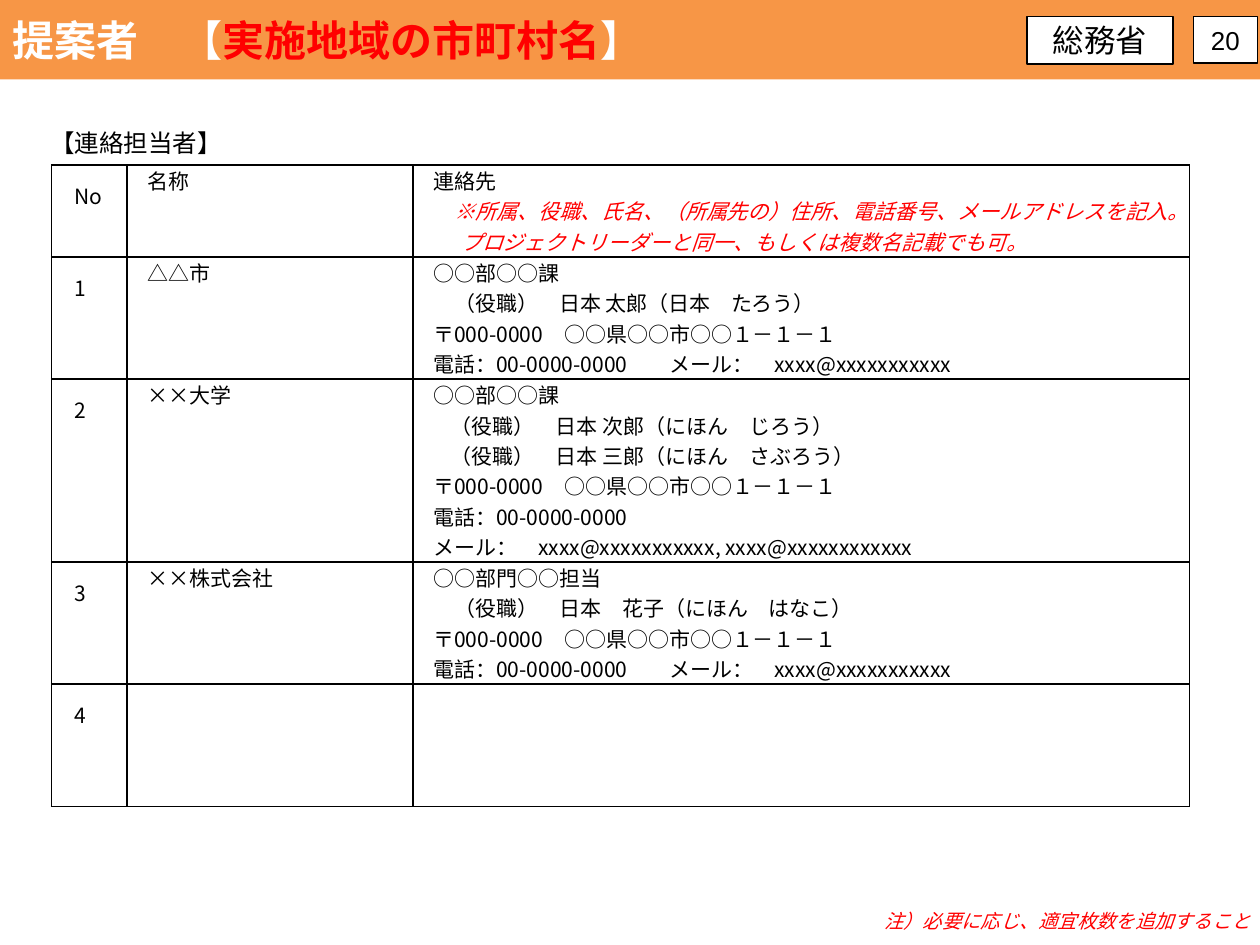
from pptx import Presentation
from pptx.dml.color import RGBColor
from pptx.enum.shapes import MSO_SHAPE
from pptx.enum.text import MSO_ANCHOR, MSO_AUTO_SIZE, PP_ALIGN
from pptx.oxml import parse_xml
from pptx.oxml.ns import nsdecls
from pptx.util import Inches, Pt

JP = "Noto Sans CJK JP"


def rgb(value):
    return RGBColor.from_string(value)


def format_run(r, size, color="000000", name=JP, bold=False, italic=False):
    """Set the run's font for both Latin and East Asian text."""
    f = r.font
    f.size, f.name, f.bold, f.italic = Pt(size), name, bold, italic
    f.color.rgb = rgb(color)
    f._element.find("{*}latin").addnext(
        parse_xml(f'<a:ea {nsdecls("a")} typeface="{name}"/>'))


prs = Presentation()
prs.slide_width, prs.slide_height = Inches(10), Inches(7.5)
s = prs.slides.add_slide(prs.slide_layouts[5])

# Title bar
title = s.shapes.title
title.left, title.top = Inches(0), Inches(0)
title.width, title.height = Inches(10), Inches(0.63)
title.fill.solid()
title.fill.fore_color.rgb = rgb("F79646")
tf = title.text_frame
tf.auto_size = MSO_AUTO_SIZE.NONE
tf.vertical_anchor = MSO_ANCHOR.MIDDLE
p = tf.paragraphs[0]
p.alignment = PP_ALIGN.LEFT
for text, color in [("提案者　【", "FFFFFF"), ("実施地域の市町村名", "FF0000"),
                    ("】", "FFFFFF")]:
    r = p.add_run()
    r.text = text
    format_run(r, 24, color, bold=True)

# Ministry and page number boxes
for text, x, w, h, size, line in [("総務省", 8.15, 1.16, 0.38, 18, 1),
                                  ("20", 9.47, 0.51, 0.37, 14.8, 0.75)]:
    sp = s.shapes.add_shape(MSO_SHAPE.RECTANGLE, Inches(x), Inches(0.13),
                            Inches(w), Inches(h))
    sp.shadow.inherit = False
    sp.fill.solid()
    sp.fill.fore_color.rgb = rgb("FFFFFF")
    sp.line.color.rgb = rgb("000000")
    sp.line.width = Pt(line)
    tf = sp.text_frame
    tf.text = text
    tf.word_wrap = False
    tf.vertical_anchor = MSO_ANCHOR.MIDDLE
    tf.paragraphs[0].alignment = PP_ALIGN.CENTER
    format_run(tf.paragraphs[0].runs[0], size, name="Arial")

# Contact table: number, name, contact lines
postal = "〒000-0000　○○県○○市○○１－１－１"
phone = "電話：00-0000-0000"
phone_mail = phone + "　　メール：　xxxx@xxxxxxxxxxx"
hint = ("　※所属、役職、氏名、（所属先の）住所、電話番号、メールアドレスを記入。"
        "プロジェクトリーダーと同一、もしくは複数名記載でも可。")
rows = [
    ("No", "名称", ["連絡先", hint]),
    ("1", "△△市", ["○○部○○課", "　（役職）　日本 太郎（日本　たろう）",
                 postal, phone_mail]),
    ("2", "××大学", ["○○部○○課", "（役職）　日本 次郎（にほん　じろう）",
                  "（役職）　日本 三郎（にほん　さぶろう）", postal, phone,
                  "メール：　xxxx@xxxxxxxxxxx, xxxx@xxxxxxxxxxxx"]),
    ("3", "××株式会社", ["○○部門○○担当", "　（役職）　日本　花子（にほん　はなこ）",
                    postal, phone_mail]),
    ("4", "", []),
]
col_widths = [0.6, 2.27, 6.16]
row_heights = [0.73, 0.97, 1.45, 0.97, 0.97]
table = s.shapes.add_table(len(rows), len(col_widths), Inches(0.41), Inches(1.31),
                           Inches(sum(col_widths)), Inches(sum(row_heights))).table
table.first_row = table.horz_banding = False
for col, w in zip(table.columns, col_widths):
    col.width = Inches(w)
for row, h, (number, name, contact) in zip(table.rows, row_heights, rows):
    row.height = Inches(h)
    for i, (cell, text) in enumerate(zip(row.cells, [number, name, "\n".join(contact)])):
        side, end = (0.04, 0.12) if i == 0 else (0.02, 0)
        cell.margin_left = cell.margin_right = Inches(side)
        cell.margin_top = cell.margin_bottom = Inches(end)
        cell.fill.solid()
        cell.fill.fore_color.rgb = rgb("FFFFFF")
        for k, edge in enumerate(["lnL", "lnR", "lnT", "lnB"]):
            cell._tc.get_or_add_tcPr().insert(k, parse_xml(
                f'<a:{edge} {nsdecls("a")} w="{Pt(1)}"><a:solidFill>'
                f'<a:srgbClr val="000000"/></a:solidFill></a:{edge}>'))
        cell.text_frame.text = text
        for p in cell.text_frame.paragraphs:
            is_hint = p.text == hint
            margin, indent = 0, 0.14
            if is_hint:
                margin, indent = 0.36, -0.22
            elif p.text.startswith("（"):
                indent = 0.28
            pPr = p._p.get_or_add_pPr()
            pPr.set("marL", str(Inches(margin)))
            pPr.set("indent", str(Inches(indent)))
            for r in p.runs:
                format_run(r, 12, "FF0000" if is_hint else "000000", italic=is_hint)

# Table heading and footnote
for text, x, y, w, h, size, color, italic in [
        ("【連絡担当者】", 0.3, 0.97, 2.49, 0.34, 14, "000000", False),
        ("注）必要に応じ、適宜枚数を追加すること", 6.92, 7.17, 3.75, 0.29, 11, "FF0000", True)]:
    tf = s.shapes.add_textbox(Inches(x), Inches(y), Inches(w), Inches(h)).text_frame
    tf.word_wrap = True
    tf.text = text
    format_run(tf.paragraphs[0].runs[0], size, color, italic=italic)

prs.save("out.pptx")
